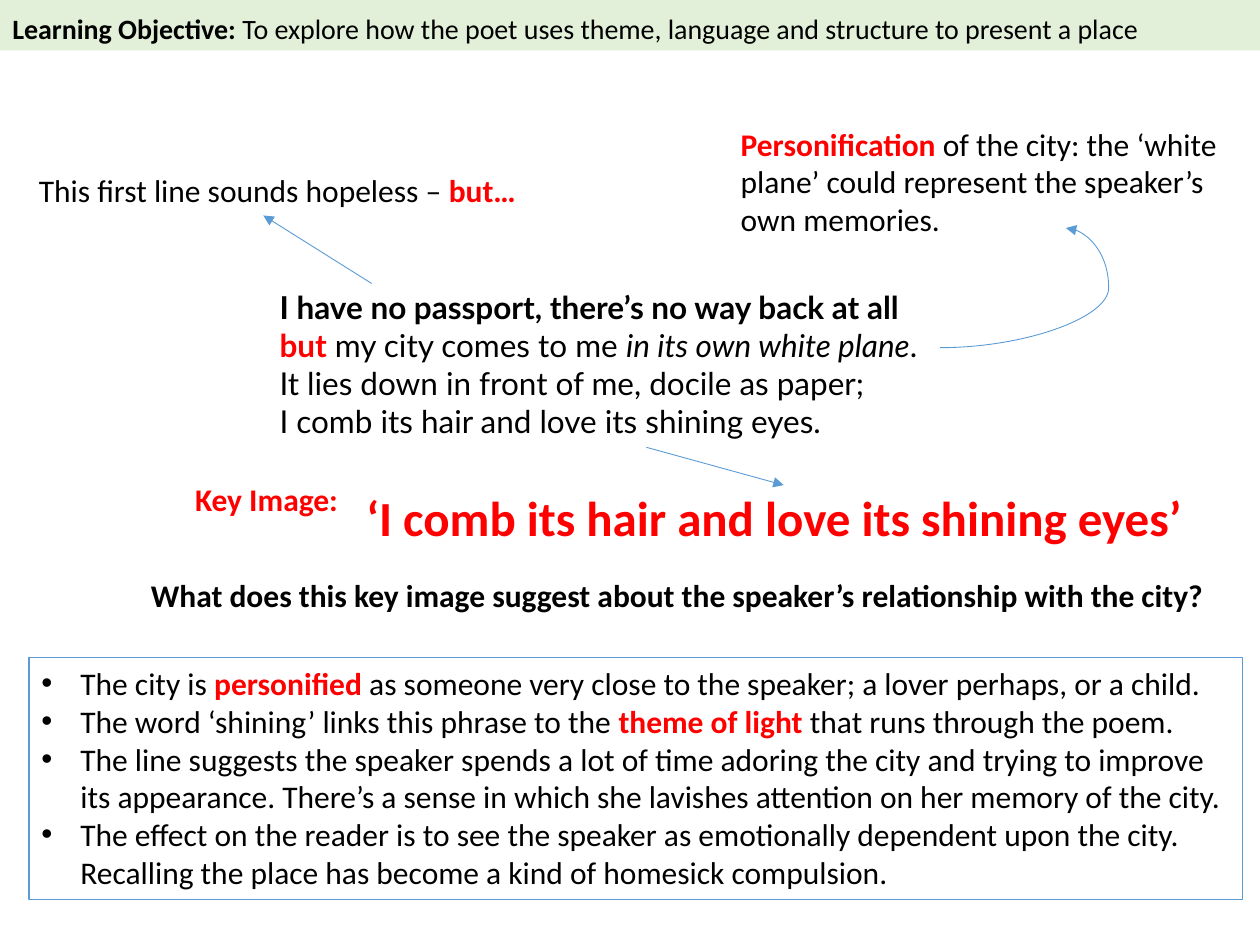
from lxml import etree
from pptx import Presentation
from pptx import util as u
from pptx.dml.color import RGBColor
from pptx.enum import shapes, text
from pptx.oxml.ns import qn

WIDE, HIGH = u.Inches(10), u.Inches(7.5)
COLS = 100
BLACK, RED, BLUE, GREEN = "000000", "FF0000", "5B9BD5", "E2F0D9"


def grid(*cells):
    """Turn counts of grid columns or rows into lengths."""
    return [round(cell * WIDE / COLS) for cell in cells]


def paint(item, color):
    """Give a fill or a font a colour from a hex string."""
    if hasattr(item, "solid"):
        item.solid()
        item.fore_color.rgb = RGBColor.from_string(color)
    else:
        item.color.rgb = RGBColor.from_string(color)


def write(para, parts, size, face):
    """Write (text, style) parts, where b is bold, i italic and r red."""
    for words, style in parts:
        for row, line in enumerate(words.split("\n")):
            if row:
                para.add_line_break()
            if line:
                run = para.add_run()
                run.text = line
                font = run.font
                font.name, font.size = face, u.Pt(size)
                font.bold, font.italic = "b" in style, "i" in style
                paint(font, RED if "r" in style else BLACK)


def fill_in(shape, paras, size=18, face="Calibri"):
    """Put left-aligned paragraphs at the top of a shape."""
    frame = shape.text_frame
    frame.word_wrap = True
    frame.vertical_anchor = text.MSO_ANCHOR.TOP
    for count, parts in enumerate(paras):
        para = frame.add_paragraph() if count else frame.paragraphs[0]
        para.alignment = text.PP_ALIGN.LEFT
        write(para, parts, size, face)
    return frame


def note(slide, place, parts, **look):
    """Add a text box with one paragraph."""
    fill_in(slide.shapes.add_textbox(*grid(*place)), [parts], **look)


def panel(slide, place, paras, fill=None, line=None, **look):
    """Add a rectangle that holds paragraphs."""
    box = slide.shapes.add_shape(shapes.MSO_SHAPE.RECTANGLE, *grid(*place))
    box.shadow.inherit = False
    if fill:
        paint(box.fill, fill)
    else:
        box.fill.background()
    if line:
        paint(box.line, line)
        box.line.width = u.Pt(0.75)
    else:
        box.line.fill.background()
    return fill_in(box, paras, **look)


def bullet(para):
    """Give a paragraph a hanging round bullet."""
    props = para._p.get_or_add_pPr()
    hang = u.Inches(0.31)
    props.set("marL", str(hang))
    props.set("indent", str(-hang))
    etree.SubElement(props, qn("a:buFont")).set("typeface", "Arial")
    etree.SubElement(props, qn("a:buChar")).set("char", "•")


def arrow(slide, ends, bend=None):
    """Add a straight arrow, or a curved one with a bend as a share of its width."""
    kind = shapes.MSO_CONNECTOR.CURVE if bend else shapes.MSO_CONNECTOR.STRAIGHT
    link = slide.shapes.add_connector(kind, *grid(*ends))
    paint(link.line, BLUE)
    link.line.width = u.Pt(0.5)
    props = link._element.spPr
    etree.SubElement(props.find(qn("a:ln")), qn("a:tailEnd")).set("type", "triangle")
    etree.SubElement(props, qn("a:effectLst"))
    if bend:
        guide = etree.SubElement(props.find(qn("a:prstGeom")).find(qn("a:avLst")), qn("a:gd"))
        guide.set("name", "adj1")
        guide.set("fmla", f"val {round(bend * 100000)}")


def main():
    """Build the poem slide and save it."""
    deck = Presentation()
    deck.slide_width, deck.slide_height = WIDE, HIGH
    slide = deck.slides.add_slide(deck.slide_layouts[6])

    head = panel(slide, (0, 0, COLS, 4), [[
        ("Learning Objective: ", "b"),
        ("To explore how the poet uses theme, language and structure to present a place", ""),
    ]], fill=GREEN, size=16)
    head.margin_top = u.Inches(0.09)

    note(slide, (21.2, 22.4, 61.1, 16.2), [
        ("I have no passport, there’s no way back at all\n", "b"),
        ("but", "br"),
        (" my city comes to me ", ""),
        ("in its own white plane", "i"),
        (".\nIt lies down in front of me, docile as paper;\n"
         "I comb its hair and love its shining eyes.", ""),
    ], face="Lato")
    note(slide, (2.1, 13.1, 54.8, 4), [
        ("This first line sounds hopeless – ", ""), ("but…", "br")])
    note(slide, (57.8, 9.4, 42.2, 10.1), [
        ("Personification", "br"),
        (" of the city: the ‘white plane’ could represent the speaker’s own memories.", "")])
    note(slide, (14.5, 37.6, 16.7, 4), [("Key Image:", "br")])
    note(slide, (28.1, 38.2, 71.9, 5.7),
         [("‘I comb its hair and love its shining eyes’", "br")], size=28)
    note(slide, (11, 45.2, 87.6, 4), [
        ("What does this key image suggest about the speaker’s relationship with the city?", "b")])

    arrow(slide, (29.5, 22.5, 20.9, 17.1))
    arrow(slide, (74.6, 27.6, 84.6, 18.1), bend=1.34)
    arrow(slide, (51.3, 35.5, 62.2, 38.5))

    ideas = panel(slide, (2.3, 52.2, 96.3, 19.2), [
        [("The city is ", ""), ("personified", "br"),
         (" as someone very close to the speaker; a lover perhaps, or a child.", "")],
        [("The word ‘shining’ links this phrase to the ", ""), ("theme of light ", "br"),
         ("that runs through the poem.", "")],
        [("The line suggests the speaker spends a lot of time adoring the city and trying to "
          "improve its appearance. There’s a sense in which she lavishes attention on her "
          "memory of the city.", "")],
        [("The effect on the reader is to see the speaker as emotionally dependent upon the "
          "city. Recalling the place has become a kind of homesick compulsion.", "")],
    ], line=BLUE)
    for para in ideas.paragraphs:
        bullet(para)

    deck.save("out.pptx")


if __name__ == "__main__":
    main()
